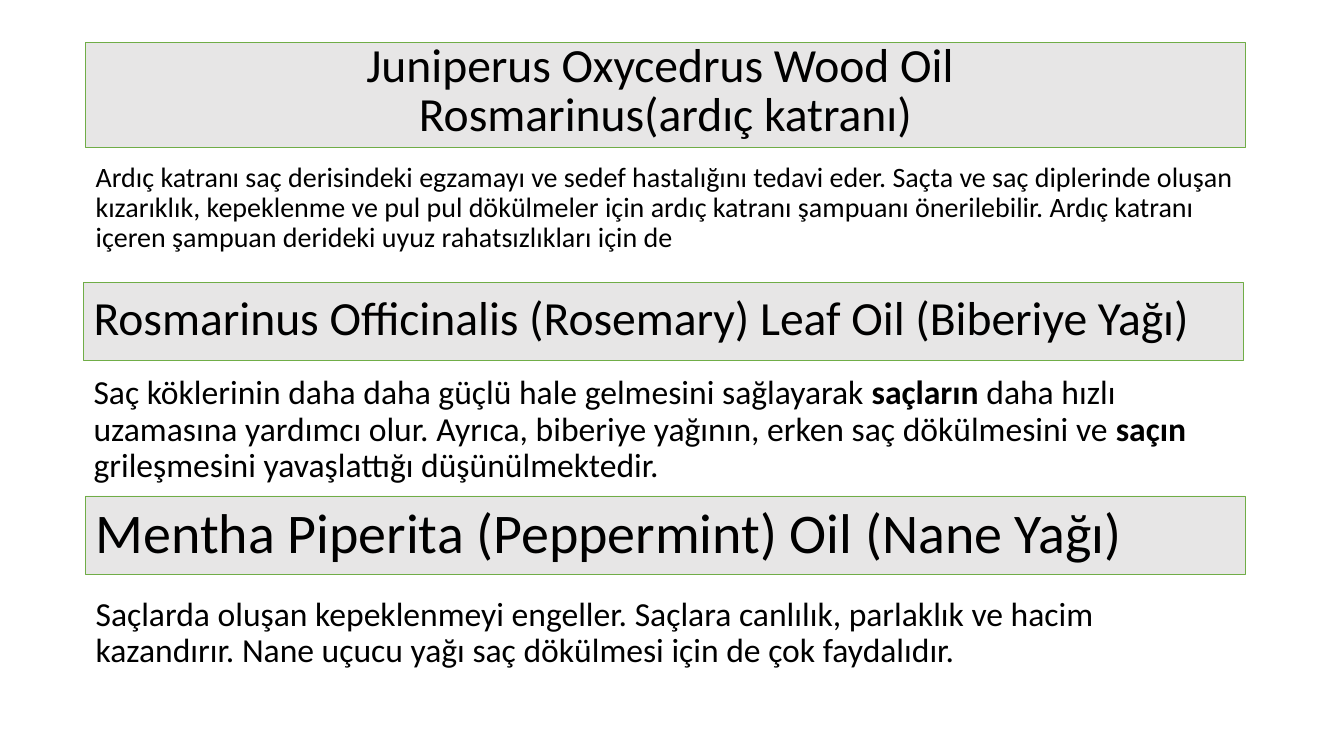
from pptx import Presentation
from pptx.dml.color import RGBColor
from pptx.enum.shapes import MSO_SHAPE
from pptx.enum.text import MSO_ANCHOR, MSO_AUTO_SIZE, PP_ALIGN
from pptx.util import Inches, Pt

RECTANGLE = MSO_SHAPE.RECTANGLE
TOP, MIDDLE = MSO_ANCHOR.TOP, MSO_ANCHOR.MIDDLE
LEFT, CENTER = PP_ALIGN.LEFT, PP_ALIGN.CENTER
NO_AUTOFIT = MSO_AUTO_SIZE.NONE

# Content: a paragraph is a list of (text, bold) runs
OILS = [
    {
        "left": 0.85,
        "heading": [[("Juniperus Oxycedrus Wood Oil ", False)],
                    [("Rosmarinus(ardıç katranı)", False)]],
        "heading_box": (0.42, 1.04),
        "heading_format": {"size": 34, "spacing": 0.7, "align": CENTER},
        "benefit": [[("Ardıç katranı saç derisindeki egzamayı ve sedef hastalığını tedavi eder. "
                      "Saçta ve saç diplerinde oluşan kızarıklık, kepeklenme ve pul pul dökülmeler "
                      "için ardıç katranı şampuanı önerilebilir. Ardıç katranı içeren şampuan "
                      "derideki uyuz rahatsızlıkları için de", False)]],
        "benefit_box": (1.57, 1.23),
        "benefit_size": 20,
    },
    {
        "left": 0.83,
        "heading": [[("Rosmarinus Officinalis (Rosemary) Leaf Oil (Biberiye Yağı)", False)]],
        "heading_box": (2.8, 0.78),
        "heading_format": {"size": 34, "spacing": 0.8},
        "benefit": [[("Saç köklerinin daha daha güçlü hale gelmesini sağlayarak ", False),
                     ("saçların", True),
                     (" daha hızlı uzamasına yardımcı olur. Ayrıca, biberiye yağının, "
                      "erken saç dökülmesini ve ", False),
                     ("saçın", True),
                     (" grileşmesini yavaşlattığı düşünülmektedir.", False)]],
        "benefit_box": (3.68, 1.23),
        "benefit_size": 24,
    },
    {
        "left": 0.85,
        "heading": [[("Mentha Piperita (Peppermint) Oil (Nane Yağı)", False)]],
        "heading_box": (4.92, 0.78),
        "heading_format": {"size": 40, "spacing": 0.9},
        "benefit": [[("Saçlarda oluşan kepeklenmeyi engeller. Saçlara canlılık, parlaklık ve "
                      "hacim kazandırır. Nane uçucu yağı saç dökülmesi için de çok faydalıdır.",
                      False)]],
        "benefit_box": (5.88, 1.31),
        "benefit_size": 24,
    },
]
BOX_WIDTH = 11.5
FONT = "Calibri"
INK, BAND_FILL, BAND_LINE = "000000", "E7E6E6", "70AD47"


def color(hex_string):
    return RGBColor.from_string(hex_string)


def write(box, paragraphs, size, spacing=0.9, before=10, align=LEFT, anchor=TOP):
    frame = box.text_frame
    frame.word_wrap = True
    frame.auto_size = NO_AUTOFIT
    frame.vertical_anchor = anchor
    frame.margin_left = frame.margin_right = Inches(0.1)
    frame.margin_top = frame.margin_bottom = Inches(0.05)
    for index, runs in enumerate(paragraphs):
        paragraph = frame.paragraphs[0] if index == 0 else frame.add_paragraph()
        paragraph.alignment = align
        paragraph.line_spacing = spacing
        paragraph.space_before = Pt(before)
        for text, bold in runs:
            run = paragraph.add_run()
            run.text = text
            run.font.name = FONT
            run.font.size = Pt(size)
            run.font.bold = bold
            run.font.color.rgb = color(INK)


def bounds(left, top, height):
    return [Inches(value) for value in (left, top, BOX_WIDTH, height)]


prs = Presentation()
prs.slide_width, prs.slide_height = Inches(13.33), Inches(7.5)
slide = prs.slides.add_slide(prs.slide_layouts[5])

for number, oil in enumerate(OILS):
    # Heading band: the first one is the slide title
    place = bounds(oil["left"], *oil["heading_box"])
    if number == 0:
        band = slide.shapes.title
        band.left, band.top, band.width, band.height = place
    else:
        band = slide.shapes.add_shape(RECTANGLE, *place)
        band.shadow.inherit = False
    band.fill.solid()
    band.fill.fore_color.rgb = color(BAND_FILL)
    band.line.color.rgb = color(BAND_LINE)
    band.line.width = Pt(0.5)
    heading_format = oil["heading_format"]
    write(band, oil["heading"], anchor=MIDDLE,
          before=0.2 * heading_format["size"], **heading_format)

    # Benefit text under the band
    benefit = slide.shapes.add_textbox(*bounds(oil["left"], *oil["benefit_box"]))
    write(benefit, oil["benefit"], size=oil["benefit_size"])

prs.save("out.pptx")
